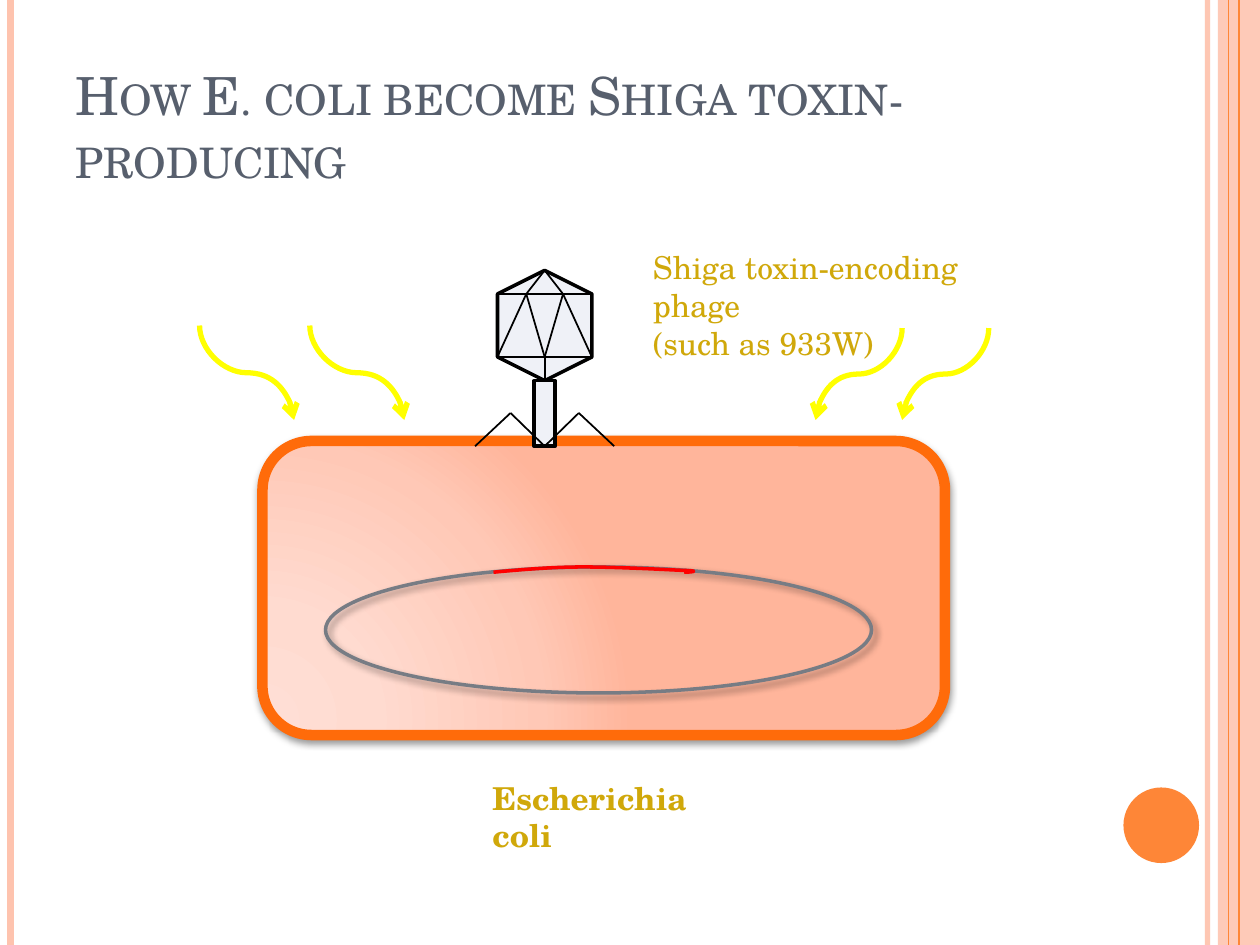
from lxml.etree import SubElement
from pptx import Presentation
from pptx.dml.color import RGBColor
from pptx.enum.shapes import MSO_CONNECTOR as Link, MSO_SHAPE as Kind
from pptx.enum.text import MSO_ANCHOR as Anchor, MSO_AUTO_SIZE as AutoSize, PP_ALIGN as Align
from pptx.oxml import parse_xml
from pptx.oxml.ns import nsdecls, qn
from pptx.util import Pt

FONT = "TeX Gyre Schola"
PEACH, ORANGE, PALE, BLACK, GOLD = "FEC3AE", "FE8637", "EFF1F7", "000000", "D0A80A"


def color(value):
    """Turn a hex string into a colour."""
    return RGBColor.from_string(value)


def add_alpha(fill, percent):
    """Make a solid fill element partly transparent."""
    tint = fill.find(".//" + qn("a:srgbClr"))
    SubElement(tint, qn("a:alpha"), val=str(percent * 1000))


def add_shadow(shape, blur, distance, angle):
    """Give a shape a soft black shadow."""
    effects = shape._element.spPr.find(qn("a:effectLst"))
    effects.append(parse_xml(
        f'<a:outerShdw {nsdecls("a")} blurRad="{Pt(blur)}" dist="{Pt(distance)}" '
        f'dir="{angle * 60000}" rotWithShape="0"><a:srgbClr val="000000">'
        '<a:alpha val="40000"/></a:srgbClr></a:outerShdw>'))


def style_shape(shape, fill=None, line=None, width=1):
    """Set the fill and outline of a shape, without a shadow."""
    shape.shadow.inherit = False
    if fill:
        shape.fill.solid()
        shape.fill.fore_color.rgb = color(fill)
    else:
        shape.fill.background()
    if line:
        shape.line.color.rgb = color(line)
        shape.line.width = Pt(width)
    else:
        shape.line.fill.background()
    return shape


def add_block(page, kind, box, **style):
    """Add a preset shape in a box given in points."""
    return style_shape(page.shapes.add_shape(kind, *map(Pt, box)), **style)


def add_line(page, start, end, hue=BLACK, width=1, link=Link.STRAIGHT):
    """Add a connector between two points."""
    line = page.shapes.add_connector(link, *map(Pt, (*start, *end)))
    line.line.color.rgb = color(hue)
    line.line.width = Pt(width)
    SubElement(line._element.spPr, qn("a:effectLst"))
    return line


def add_frame(page, box):
    """Draw the striped page edges and the orange disc."""
    left, top, width, height = box
    right, bottom = left + width, top + height
    band = add_block(page, Kind.RECTANGLE, (right - 24, top, 24, height), fill=PEACH)
    add_alpha(band._element.spPr, 87)
    stripes = [(right - 30, PEACH, 3), (left + 6, PEACH, 4.5),
               (right - 12, ORANGE, 1.5), (right - 18, ORANGE, 0.75)]
    lines = [add_line(page, (x, top), (x, bottom), hue, weight) for x, hue, weight in stripes]
    add_alpha(lines[0]._element.spPr, 93)
    add_block(page, Kind.OVAL, (right - 78, bottom - 90, 43.2, 43.2), fill=ORANGE)


def format_span(span, size, hue, bold=False):
    """Set the font of a run."""
    span.font.name, span.font.size, span.font.bold = FONT, Pt(size), bold
    span.font.color.rgb = color(hue)


def add_title(page, box, text):
    """Place and format the title placeholder in small capitals."""
    title = page.shapes.title
    title.left, title.top, title.width, title.height = map(Pt, box)
    frame = title.text_frame
    frame.vertical_anchor, frame.auto_size, frame.word_wrap = Anchor.BOTTOM, AutoSize.NONE, True
    para = frame.paragraphs[0]
    para.alignment = Align.LEFT
    span = para.add_run()
    span.text = text
    format_span(span, 30, "575F6D")
    span.font._element.set("cap", "small")


def add_label(page, box, lines, bold=False):
    """Add a gold text label, one paragraph a line."""
    frame = page.shapes.add_textbox(*map(Pt, box)).text_frame
    frame.word_wrap = True
    for index, text in enumerate(lines):
        para = frame.add_paragraph() if index else frame.paragraphs[0]
        span = para.add_run()
        span.text = text
        format_span(span, 18, GOLD, bold)


def bezier(points, steps=12):
    """Give points along a cubic curve, without its start."""
    for step in range(1, steps + 1):
        t = step / steps
        weights = ((1 - t) ** 3, 3 * t * (1 - t) ** 2, 3 * t * t * (1 - t), t ** 3)
        yield tuple(sum(w * p[axis] for w, p in zip(weights, points)) for axis in (0, 1))


def add_cell(page, box):
    """Draw the bacterium with its chromosome and the toxin gene."""
    left, top, _, _ = box
    wall = add_block(page, Kind.ROUNDED_RECTANGLE, box, line="FF6B0A", width=6)
    stops = [(0, "FFDED5"), (30, "FFDBD0"), (75, "FFC8B6"), (100, "FFB59B")]
    marks = "".join(f'<a:gs pos="{place * 1000}"><a:srgbClr val="{hue}"/></a:gs>'
                    for place, hue in stops)
    properties = wall._element.spPr
    properties.replace(properties.find(qn("a:noFill")), parse_xml(
        f'<a:gradFill {nsdecls("a")} rotWithShape="1"><a:gsLst>{marks}</a:gsLst>'
        '<a:path path="circle"><a:fillToRect l="5000" t="100000" r="120000" b="10000"/>'
        '</a:path></a:gradFill>'))
    add_shadow(wall, 4, 2, 90)

    chromosome = add_block(page, Kind.OVAL, (left + 36, top + 72, 312, 72),
                           line="777C84", width=2)
    add_shadow(chromosome, 4, 3, 45)

    curve = [(132, 75), (148.5, 73.5), (165.5, 72), (183.5, 72), (201.5, 72),
             (231, 73.5), (240.5, 74), (250.5, 74.2), (245.5, 75), (241, 75)]
    knots = [(Pt(left + x), Pt(top + y)) for x, y in curve]
    path = [point for first in (0, 3, 6) for point in bezier(knots[first:first + 4])]
    builder = page.shapes.build_freeform(*knots[0])
    builder.add_line_segments(path, close=False)
    style_shape(builder.convert_to_shape(), line="FF0000", width=2)


def add_phage(page, box):
    """Draw the phage: faceted head, tail and two legs."""
    left, top, width, height = box
    middle, near, far = width / 2, 12.75, width - 12.75
    upper, lower, neck, knee = 13.5, 49.5, 63, 81.5
    head = add_block(page, Kind.HEXAGON, (left + middle - 31.5, top + 4.5, 63, 54),
                     fill=PALE, line=BLACK, width=2)
    head.rotation = 90
    tail = add_block(page, Kind.RECTANGLE, (left + middle - 6, top + neck, 12, height - neck),
                     fill=PALE, line=BLACK, width=2)

    def edge(start, end):
        return add_line(page, (left + start[0], top + start[1]), (left + end[0], top + end[1]))

    for y in (upper, lower):
        edge((near, y), (far, y))
    edge((middle, neck), (middle, lower)).begin_connect(tail, 0)
    for side, outer in ((-1, near), (1, far)):
        facet, joint = (middle + side * 10.5, upper), (middle + side * 19.5, knee)
        for corner in ((middle, lower), (outer, lower), (middle, 0)):
            edge(facet, corner)
        edge((middle, height), joint).begin_connect(tail, 2)
        edge(joint, (middle + side * middle, height))


def add_signal(page, box, rightward):
    """Draw a yellow curved arrow falling through the box."""
    left, top, width, height = box
    x, y = left + width / 2, top + height / 2
    begin, end = x - height / 2, x + height / 2
    if rightward:
        begin, end = end, begin
    arrow = add_line(page, (begin, y - width / 2), (end, y + width / 2),
                     "FFFF00", 3, Link.CURVE)
    arrow._element.spPr.find(qn("a:xfrm")).set("rot", str((270 if rightward else 90) * 60000))
    SubElement(arrow.line._get_or_add_ln(), qn("a:tailEnd"), type="arrow")


def main():
    """Build the slide and save it."""
    deck = Presentation()
    deck.slide_width, deck.slide_height = Pt(720), Pt(540)
    page = deck.slides.add_slide(deck.slide_layouts[5])
    add_frame(page, (0, 0, 720, 540))
    add_title(page, (36, 21.6, 588, 90), "How E. coli become Shiga toxin-producing")
    add_label(page, (274.3, 441.4, 152.6, 28.8), ["Escherichia coli"], bold=True)
    add_cell(page, (150, 252, 390, 168))
    add_phage(page, (271.5, 154.5, 79.5, 100.5))
    for left in (114, 177):
        add_signal(page, (left, 186, 54, 54), True)
    for left in (515.5, 466):
        add_signal(page, (left, 187.5, 49.5, 52.5), False)
    add_label(page, (366, 138.2, 240, 51), ["Shiga toxin-encoding phage", "(such as 933W)"])
    deck.save("out.pptx")


if __name__ == "__main__":
    main()
